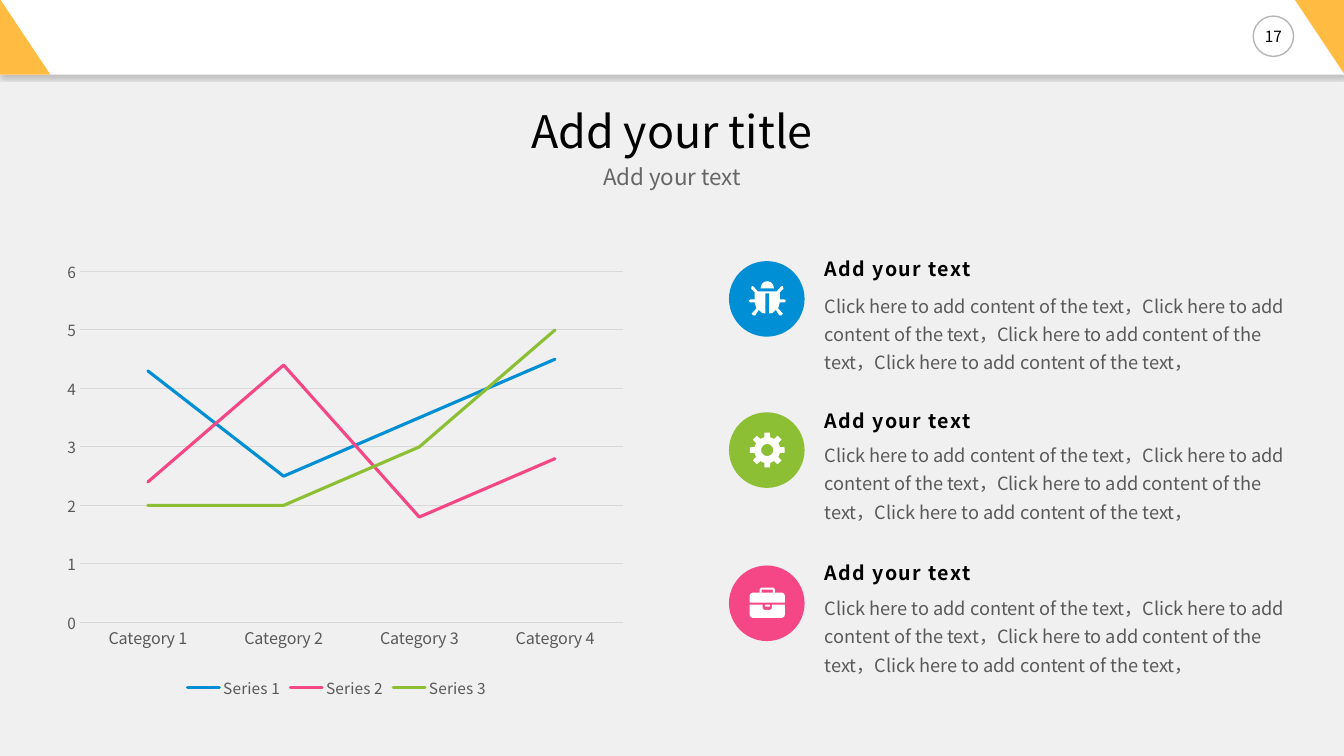
from math import cos, radians, sin

from lxml.etree import SubElement
from pptx import Presentation
from pptx.chart.data import CategoryChartData
from pptx.dml.color import RGBColor
from pptx.enum.chart import XL_CHART_TYPE, XL_LEGEND_POSITION, XL_TICK_MARK
from pptx.enum.shapes import MSO_SHAPE as Preset
from pptx.enum.text import MSO_ANCHOR as Anchor, PP_ALIGN as Align
from pptx.oxml import parse_xml
from pptx.oxml.ns import nsdecls, qn
from pptx.util import Inches, Pt

FONT = "Noto Sans CJK JP"
COLORS = {
    "back": "F0F0F0", "white": "FFFFFF", "black": "000000", "ring": "0D0D0D",
    "amber": "FFBB42", "blue": "008FD5", "pink": "F54785", "green": "8DBF34",
    "body": "595959", "subtitle": "666666", "grid": "D9D9D9", "chart": "AFABAB",
}
HEADING = "Add your text"
CONTENT = "Click here to add content of the text，" * 4

NUMBER = {"size": 11, "color": "black", "align": Align.CENTER, "anchor": Anchor.MIDDLE}
TITLE = {"size": 32, "color": "black", "align": Align.CENTER, "line_spacing": 0.9}
SUBTITLE = {"size": 16, "color": "subtitle", "align": Align.CENTER, "line_spacing": 0.8}
ITEM_HEAD = {"size": 14, "color": "black", "bold": True, "tracking": 100,
             "line_spacing": 0.9, "space_before": Pt(10)}
ITEM_BODY = {"size": 13, "color": "body", "line_spacing": 1.3, "space_before": Pt(10)}


def rgb(name):
    return RGBColor.from_string(COLORS[name])


def paint(shape, color):
    shape.shadow.inherit = False
    shape.fill.solid()
    shape.fill.fore_color.rgb = rgb(color)
    shape.line.fill.background()
    return shape


def add_preset(page, preset, place, color):
    return paint(page.shapes.add_shape(preset, *map(Inches, place)), color)


def set_alpha(color_node, percent):
    SubElement(color_node, qn("a:alpha"), val=str(percent * 1000))


def add_text(page, text, place, style):
    box = page.shapes.add_textbox(*map(Inches, place))
    frame = box.text_frame
    frame.word_wrap = True
    frame.vertical_anchor = style.get("anchor", Anchor.TOP)
    for side in ("left", "top", "right", "bottom"):
        setattr(frame, f"margin_{side}", 0)
    para = frame.paragraphs[0]
    para.alignment = style.get("align", Align.LEFT)
    for name in ("line_spacing", "space_before"):
        setattr(para, name, style.get(name))
    span = para.add_run()
    span.text = text
    span.font.bold = style.get("bold", False)
    set_font(span.font, style["size"], style["color"])
    props = span.font._element
    SubElement(props, qn("a:ea"), typeface=FONT)
    if "tracking" in style:
        props.set("spc", str(style["tracking"]))


def set_font(font, size, color, name=FONT):
    for key, value in {"size": Pt(size), "name": name}.items():
        setattr(font, key, value)
    font.color.rgb = rgb(color)


def add_header(page):
    bar = add_preset(page, Preset.RECTANGLE, (0, -0.01, 13.33, 0.75), "white")
    effects = bar._element.spPr.find(qn("a:effectLst"))
    shadow = SubElement(effects, qn("a:outerShdw"), blurRad=str(Pt(3)),
                        dist=str(Pt(2)), dir="5400000", algn="t", rotWithShape="0")
    set_alpha(SubElement(shadow, qn("a:srgbClr"), val=COLORS["black"]), 20)

    ring = add_preset(page, Preset.OVAL, (12.43, 0.16, 0.4, 0.4), "white")
    ring.line.color.rgb = rgb("ring")
    ring.line.width = Pt(1)
    set_alpha(ring.line._ln.find(".//" + qn("a:srgbClr")), 30)

    for left, top, angle in ((0, -0.01, 0), (12.83, -0.02, 180)):
        corner = add_preset(page, Preset.RIGHT_TRIANGLE, (left, top, 0.5, 0.75), "amber")
        corner.rotation = angle
    add_text(page, "17", (12.43, 0.16, 0.4, 0.4), NUMBER)


def mirrored(half):
    """Close a right-hand outline with its reflection in the vertical axis."""
    return half + [(-x, y) for x, y in reversed(half)]


def polar(radius, degrees):
    return radius * cos(radians(degrees)), radius * sin(radians(degrees))


def bug_outlines():
    dome = [(65 * cos(radians(a)), -105 - 70 * sin(radians(a))) for a in range(0, 91, 10)]
    body = [(18, -55), (18, 145), (50, 140), (85, 110), (120, 165), (140, 165),
            (155, 145), (107, 95), (125, 35), (170, 35), (185, 20), (170, 5),
            (125, 5), (125, -65), (160, -100), (155, -125), (140, -125), (95, -75)]
    return [mirrored(dome), mirrored(body)]


def gear_outlines():
    tooth = ((130, -13), (175, -9), (175, 9), (130, 13))
    rim = [polar(radius, start + turn) for start in range(0, 360, 45) for radius, turn in tooth]
    hole = [polar(60, angle) for angle in range(360, 0, -15)]
    return [rim, hole]


def briefcase_outlines():
    lid = [(60, -155), (75, -140), (75, -105), (145, -105), (165, -97), (175, -75), (175, -5)]
    handle_gap = [(55, -105), (55, -135)]
    base = [(30, 65), (45, 50), (45, 15), (175, 15), (175, 115), (165, 137), (145, 145)]
    clasp = [(25, 15), (25, 35)]
    return [mirrored(half) for half in (lid, handle_gap, base, clasp)]


def add_icon(page, outlines, center_x, center_y):
    """Draw outlines given in thousandths of an inch around the center."""
    first, *others = outlines
    builder = page.shapes.build_freeform(*first[0], scale=Inches(0.001))
    builder.add_line_segments(first[1:], close=True)
    for outline in others:
        builder.move_to(*outline[0])
        builder.add_line_segments(outline[1:], close=True)
    paint(builder.convert_to_shape(Inches(center_x), Inches(center_y)), "white")


def add_item(page, circle_top, head_top, body_top, color, outlines):
    add_preset(page, Preset.OVAL, (7.23, circle_top, 0.75, 0.75), color)
    add_icon(page, outlines, 7.61, circle_top + 0.375)
    add_text(page, HEADING, (8.18, head_top, 4.66, 0.35), ITEM_HEAD)
    add_text(page, CONTENT, (8.18, body_top, 4.66, 0.91), ITEM_BODY)


def set_plot_layout(chart, x, y, w, h):
    area = chart._chartSpace.chart.plotArea
    for old in area.findall(qn("c:layout")):
        area.remove(old)
    sizes = "".join(f'<c:{key} val="{value}"/>'
                    for key, value in {"x": x, "y": y, "w": w, "h": h}.items())
    area.insert(0, parse_xml(
        f'<c:layout {nsdecls("c")}><c:manualLayout><c:layoutTarget val="inner"/>'
        f'<c:xMode val="edge"/><c:yMode val="edge"/>{sizes}</c:manualLayout></c:layout>'))


def add_line_chart(page):
    data = CategoryChartData()
    data.categories = [f"Category {n}" for n in range(1, 5)]
    for n, values in enumerate(((4.3, 2.5, 3.5, 4.5), (2.4, 4.4, 1.8, 2.8), (2, 2, 3, 5)), 1):
        data.add_series(f"Series {n}", values)
    place = map(Inches, (0.42, 2.53, 5.84, 4.44))
    chart = page.shapes.add_chart(XL_CHART_TYPE.LINE, *place, data).chart
    chart.has_title = False
    set_font(chart.font, 10, "chart", "Manrope")
    set_plot_layout(chart, 0.064, 0.037, 0.922, 0.784)

    chart.has_legend = True
    chart.legend.position = XL_LEGEND_POSITION.BOTTOM
    chart.legend.include_in_layout = False
    set_font(chart.legend.font, 11, "body")

    categories, values = chart.category_axis, chart.value_axis
    for axis, size in ((categories, 11.5), (values, 11)):
        axis.major_tick_mark = axis.minor_tick_mark = XL_TICK_MARK.NONE
        set_font(axis.tick_labels.font, size, "body")
    for key, value in {"minimum_scale": 0, "maximum_scale": 6, "major_unit": 1}.items():
        setattr(values, key, value)
    values.format.line.fill.background()
    for line in (categories.format.line, values.major_gridlines.format.line):
        line.color.rgb = rgb("grid")
        line.width = Pt(0.75)

    chart.plots[0].vary_by_categories = False
    for series, color in zip(chart.plots[0].series, ("blue", "pink", "green")):
        series.smooth = False
        series.format.line.color.rgb = rgb(color)
        series.format.line.width = Pt(2.25)
        series.format.line._ln.set("cap", "rnd")


def main():
    deck = Presentation()
    deck.slide_width, deck.slide_height = Inches(13.33), Inches(7.5)
    page = deck.slides.add_slide(deck.slide_layouts[6])
    page.background.fill.solid()
    page.background.fill.fore_color.rgb = rgb("back")
    add_header(page)
    add_text(page, "Add your title", (0.5, 1.09, 12.33, 0.54), TITLE)
    add_text(page, "Add your text", (0.5, 1.67, 12.33, 0.27), SUBTITLE)
    add_line_chart(page)
    add_item(page, 2.59, 2.57, 2.86, "blue", bug_outlines())
    add_item(page, 4.09, 4.08, 4.34, "green", gear_outlines())
    add_item(page, 5.61, 5.59, 5.86, "pink", briefcase_outlines())
    deck.save("out.pptx")


if __name__ == "__main__":
    main()
